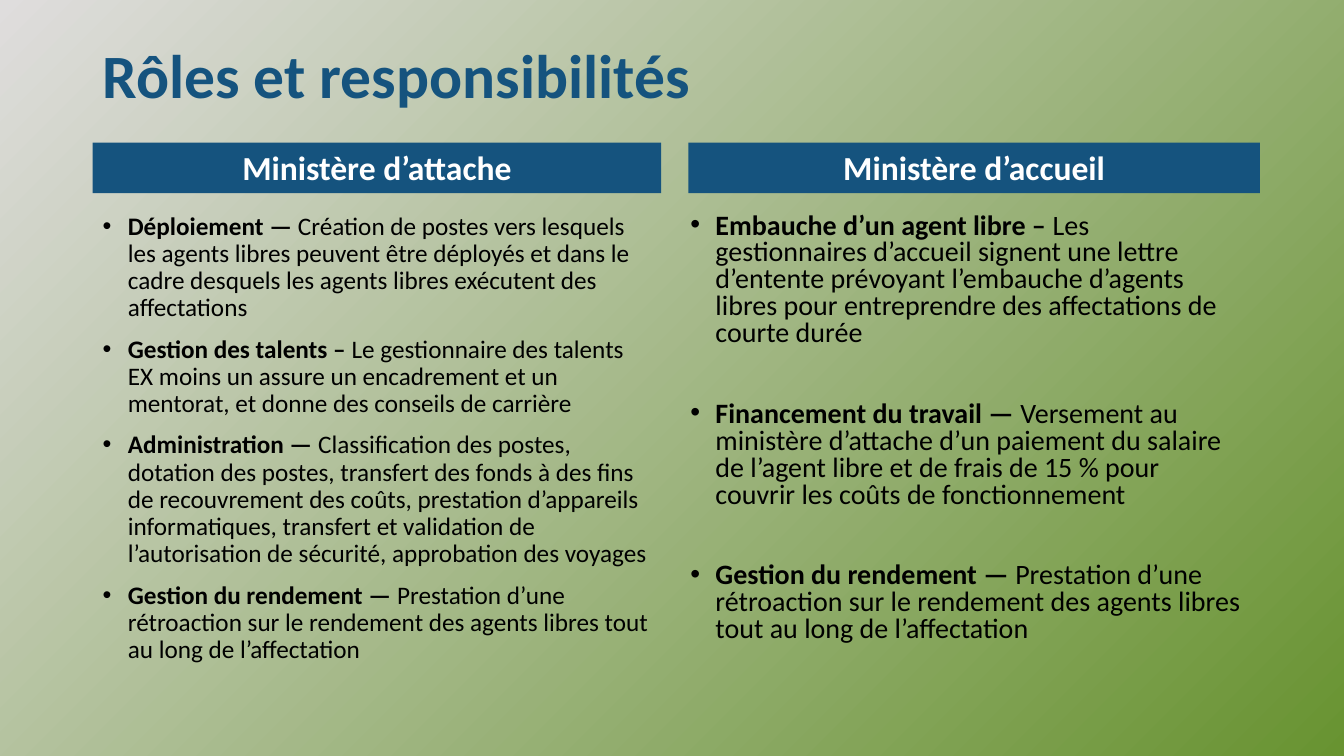
from lxml import etree
from pptx import Presentation
from pptx import util as u
from pptx.dml import color
from pptx.enum import shapes, text
from pptx.oxml import ns

NAVY, WHITE, BLACK = "15537E", "FFFFFF", "000000"


def rgb(value):
    return color.RGBColor.from_string(value)


def write(paragraph, wording, size, ink, bold=True):
    run = paragraph.add_run()
    run.text = wording
    look = {"name": "Calibri", "size": u.Pt(size), "bold": bold}
    for key, value in look.items():
        setattr(run.font, key, value)
    run.font.color.rgb = rgb(ink)


deck = Presentation()
deck.slide_width, deck.slide_height = u.Pt(960), u.Pt(540)
slide = deck.slides.add_slide(deck.slide_layouts[6])

backdrop = slide.background.fill
backdrop.gradient()
for stop, shade in zip(backdrop.gradient_stops, ("689331", "DFDDDD")):
    stop.color.rgb = rgb(shade)
gradient = slide.element.find(".//" + ns.qn("a:gradFill"))
for stop, position in zip(gradient.iter(ns.qn("a:gs")), ("0", "100000")):
    stop.set("pos", position)
linear = gradient.find(ns.qn("a:lin"))
radial = etree.Element(ns.qn("a:path"), {"path": "circle"})
etree.SubElement(radial, ns.qn("a:fillToRect"), {"l": "100000", "t": "100000"})
gradient.replace(linear, radial)

title = slide.shapes.add_textbox(u.Pt(66.24), u.Pt(28.8), u.Pt(828), u.Pt(104.4))
title.text_frame.word_wrap = True
heading = title.text_frame.paragraphs[0]
heading.line_spacing = 0.9
write(heading, "Rôles et responsibilités", 44, NAVY)

ministries = [
    {
        "name": "Ministère d’attache", "banner_left": 66.24, "left": 66.24, "width": 406,
        "size": 18, "spacing": 0.9, "gap": 10,
        "roles": [
            ("Déploiement — ", "Création de postes vers lesquels les agents libres peuvent être déployés et dans le cadre desquels les agents libres exécutent des affectations"),
            ("Gestion des talents – ", "Le gestionnaire des talents EX moins un assure un encadrement et un mentorat, et donne des conseils de carrière"),
            ("Administration — ", "Classification des postes, dotation des postes, transfert des fonds à des fins de recouvrement des coûts, prestation d’appareils informatiques, transfert et validation de l’autorisation de sécurité, approbation des voyages"),
            ("Gestion du rendement — ", "Prestation d’une rétroaction sur le rendement des agents libres tout au long de l’affectation"),
        ],
    },
    {
        "name": "Ministère d’accueil", "banner_left": 491.76, "left": 486, "width": 408.24,
        "size": 20, "spacing": 0.8, "gap": 38.5,
        "roles": [
            ("Embauche d’un agent libre – ", "Les gestionnaires d’accueil signent une lettre d’entente prévoyant l’embauche d’agents libres pour entreprendre des affectations de courte durée"),
            ("Financement du travail — ", "Versement au ministère d’attache d’un paiement du salaire de l’agent libre et de frais de 15 % pour couvrir les coûts de fonctionnement"),
            ("Gestion du rendement — ", "Prestation d’une rétroaction sur le rendement des agents libres tout au long de l’affectation"),
        ],
    },
]

for ministry in ministries:
    width = u.Pt(ministry["width"])
    banner = slide.shapes.add_shape(
        shapes.MSO_SHAPE.RECTANGLE, u.Pt(ministry["banner_left"]), u.Pt(102), width, u.Pt(36))
    banner.shadow.inherit = False
    banner.fill.solid()
    banner.fill.fore_color.rgb = rgb(NAVY)
    banner.line.fill.background()
    banner.text_frame.vertical_anchor = text.MSO_ANCHOR.BOTTOM
    label = banner.text_frame.paragraphs[0]
    for key, value in {"alignment": text.PP_ALIGN.CENTER, "line_spacing": 0.9}.items():
        setattr(label, key, value)
    write(label, ministry["name"], 24, WHITE)

    duties = slide.shapes.add_textbox(u.Pt(ministry["left"]), u.Pt(149), width, u.Pt(338.4))
    duties.text_frame.word_wrap = True
    for index, (role, detail) in enumerate(ministry["roles"]):
        duty = duties.text_frame.add_paragraph() if index else duties.text_frame.paragraphs[0]
        duty.line_spacing = ministry["spacing"]
        duty.space_before = u.Pt(ministry["gap"] if index else 0)
        layout = duty._p.get_or_add_pPr()
        layout.set("marL", str(u.Pt(18)))
        layout.set("indent", str(u.Pt(-18)))
        bullet_ink = etree.SubElement(layout, ns.qn("a:buClr"))
        etree.SubElement(bullet_ink, ns.qn("a:srgbClr"), val=BLACK)
        etree.SubElement(layout, ns.qn("a:buFont"), typeface="Arial")
        etree.SubElement(layout, ns.qn("a:buChar"), char="•")
        write(duty, role, ministry["size"], BLACK)
        write(duty, detail, ministry["size"], BLACK, bold=False)

deck.save("out.pptx")
